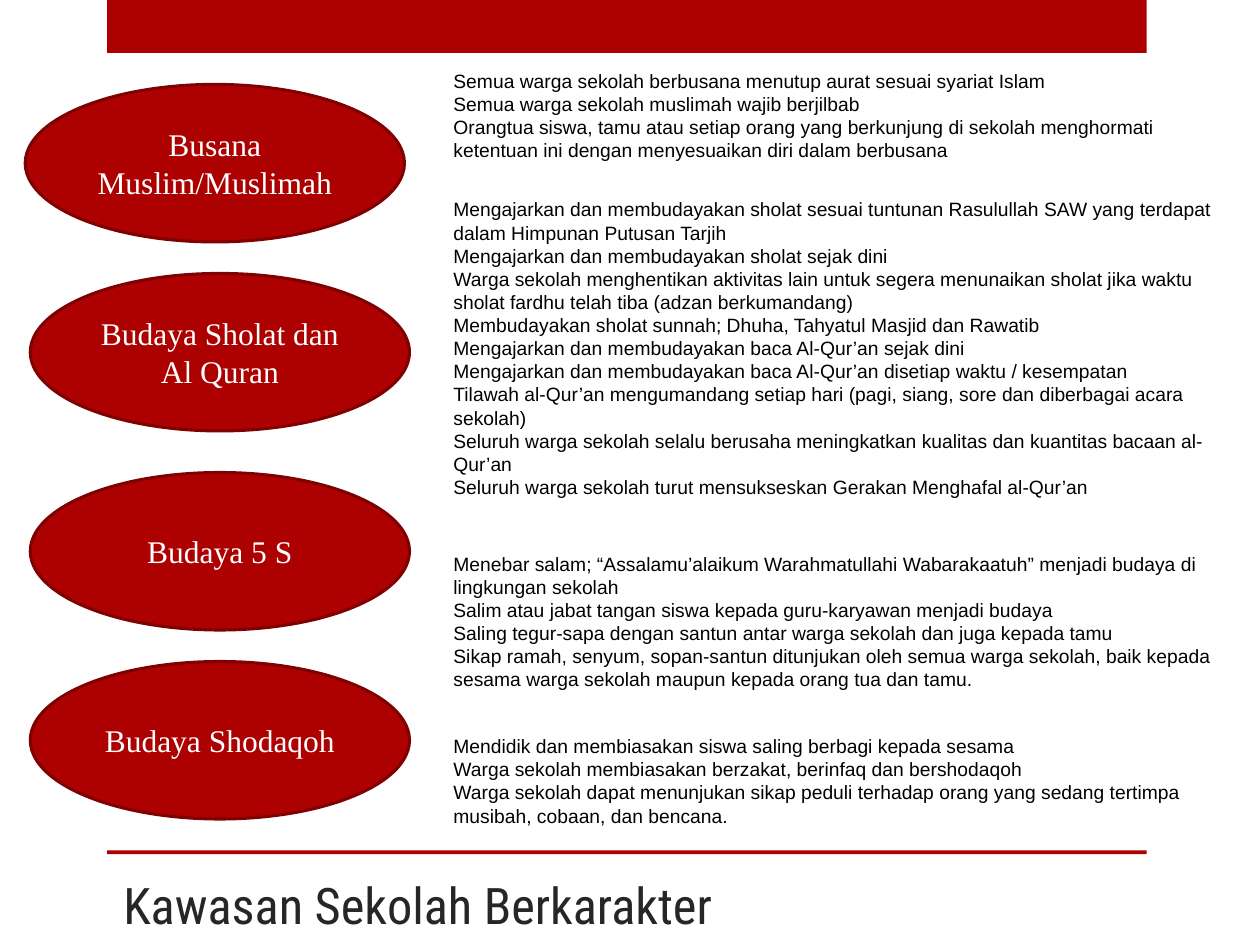
from pptx import Presentation
from pptx.dml.color import RGBColor
from pptx.enum.shapes import MSO_SHAPE
from pptx.enum.text import MSO_ANCHOR, PP_ALIGN
from pptx.util import Inches, Pt

RED = RGBColor(0xAD, 0x01, 0x01)
DARK_RED = RGBColor(0x80, 0x01, 0x01)
CHARCOAL = RGBColor(0x26, 0x26, 0x26)
BLACK = RGBColor(0, 0, 0)
WHITE = RGBColor(0xFF, 0xFF, 0xFF)

TITLE_FORMAT = {"name": "Roboto Condensed", "size": Pt(28.8)}
TOPIC_FORMAT = {"name": "Times New Roman", "size": Pt(18)}
DETAIL_FORMAT = {"name": "Arial", "size": Pt(11)}

TOPICS = [
    ("Busana Muslim/Muslimah", 0.2, 0.67, 0.5, 0.84, [
        "Semua warga sekolah berbusana menutup aurat sesuai syariat Islam",
        "Semua warga sekolah muslimah wajib berjilbab",
        "Orangtua siswa, tamu atau setiap orang yang berkunjung di sekolah menghormati "
        "ketentuan ini dengan menyesuaikan diri dalam berbusana",
    ]),
    ("Budaya Sholat dan Al Quran", 0.24, 2.17, 1.52, 2.51, [
        "Mengajarkan dan membudayakan sholat sesuai tuntunan Rasulullah SAW yang terdapat "
        "dalam Himpunan Putusan Tarjih",
        "Mengajarkan dan membudayakan sholat sejak dini",
        "Warga sekolah menghentikan aktivitas lain untuk segera menunaikan sholat jika waktu "
        "sholat fardhu telah tiba (adzan berkumandang)",
        "Membudayakan sholat sunnah; Dhuha, Tahyatul Masjid dan Rawatib",
        "Mengajarkan dan membudayakan baca Al-Qur’an sejak dini",
        "Mengajarkan dan membudayakan baca Al-Qur’an disetiap waktu / kesempatan",
        "Tilawah al-Qur’an mengumandang setiap hari (pagi, siang, sore dan diberbagai acara "
        "sekolah)",
        "Seluruh warga sekolah selalu berusaha meningkatkan kualitas dan kuantitas bacaan "
        "al-Qur’an",
        "Seluruh warga sekolah turut mensukseskan Gerakan Menghafal al-Qur’an",
    ]),
    ("Budaya 5 S", 0.24, 3.75, 4.33, 1.21, [
        "Menebar salam; “Assalamu’alaikum Warahmatullahi Wabarakaatuh” menjadi budaya di "
        "lingkungan sekolah",
        "Salim atau jabat tangan siswa kepada guru-karyawan menjadi budaya",
        "Saling tegur-sapa dengan santun antar warga sekolah dan juga kepada tamu",
        "Sikap ramah, senyum, sopan-santun ditunjukan oleh semua warga sekolah, baik kepada "
        "sesama warga sekolah maupun kepada orang tua dan tamu.",
    ]),
    ("Budaya Shodaqoh", 0.24, 5.25, 5.78, 0.84, [
        "Mendidik dan membiasakan siswa saling berbagi kepada sesama",
        "Warga sekolah membiasakan berzakat, berinfaq dan bershodaqoh",
        "Warga sekolah dapat menunjukan sikap peduli terhadap orang yang sedang tertimpa "
        "musibah, cobaan, dan bencana.",
    ]),
]


def add_filled_shape(kind, left, top, width, height):
    shape = slide.shapes.add_shape(
        kind, Inches(left), Inches(top), Inches(width), Inches(height))
    shape.shadow.inherit = False
    shape.fill.solid()
    shape.fill.fore_color.rgb = RED
    shape.line.fill.background()
    return shape


def write_text(shape, lines, font_format, color, anchor, alignment):
    frame = shape.text_frame
    frame.word_wrap = True
    frame.vertical_anchor = anchor
    frame.text = "\n".join(lines)
    for paragraph in frame.paragraphs:
        paragraph.alignment = alignment
        font = paragraph.runs[0].font
        for name, value in font_format.items():
            setattr(font, name, value)
        font.color.rgb = color


presentation = Presentation()
presentation.slide_width = Inches(10)
presentation.slide_height = Inches(7.5)
slide = presentation.slides.add_slide(presentation.slide_layouts[6])

for top, height in [(0, 0.42), (6.75, 0.03)]:
    add_filled_shape(MSO_SHAPE.RECTANGLE, 0.85, top, 8.25, height)

title = slide.shapes.add_textbox(Inches(0.88), Inches(6.89), Inches(5.62), Inches(0.58))
write_text(title, ["Kawasan Sekolah Berkarakter"], TITLE_FORMAT, CHARCOAL,
           MSO_ANCHOR.BOTTOM, PP_ALIGN.LEFT)

for topic, left, top, detail_top, detail_height, details in TOPICS:
    ellipse = add_filled_shape(MSO_SHAPE.OVAL, left, top, 3.01, 1.25)
    ellipse.line.color.rgb = DARK_RED
    ellipse.line.width = Pt(1.75)
    write_text(ellipse, [topic], TOPIC_FORMAT, WHITE, MSO_ANCHOR.MIDDLE, PP_ALIGN.CENTER)

    detail_box = slide.shapes.add_textbox(
        Inches(3.5), Inches(detail_top), Inches(6.25), Inches(detail_height))
    write_text(detail_box, details, DETAIL_FORMAT, BLACK, MSO_ANCHOR.TOP, PP_ALIGN.LEFT)

presentation.save("out.pptx")
